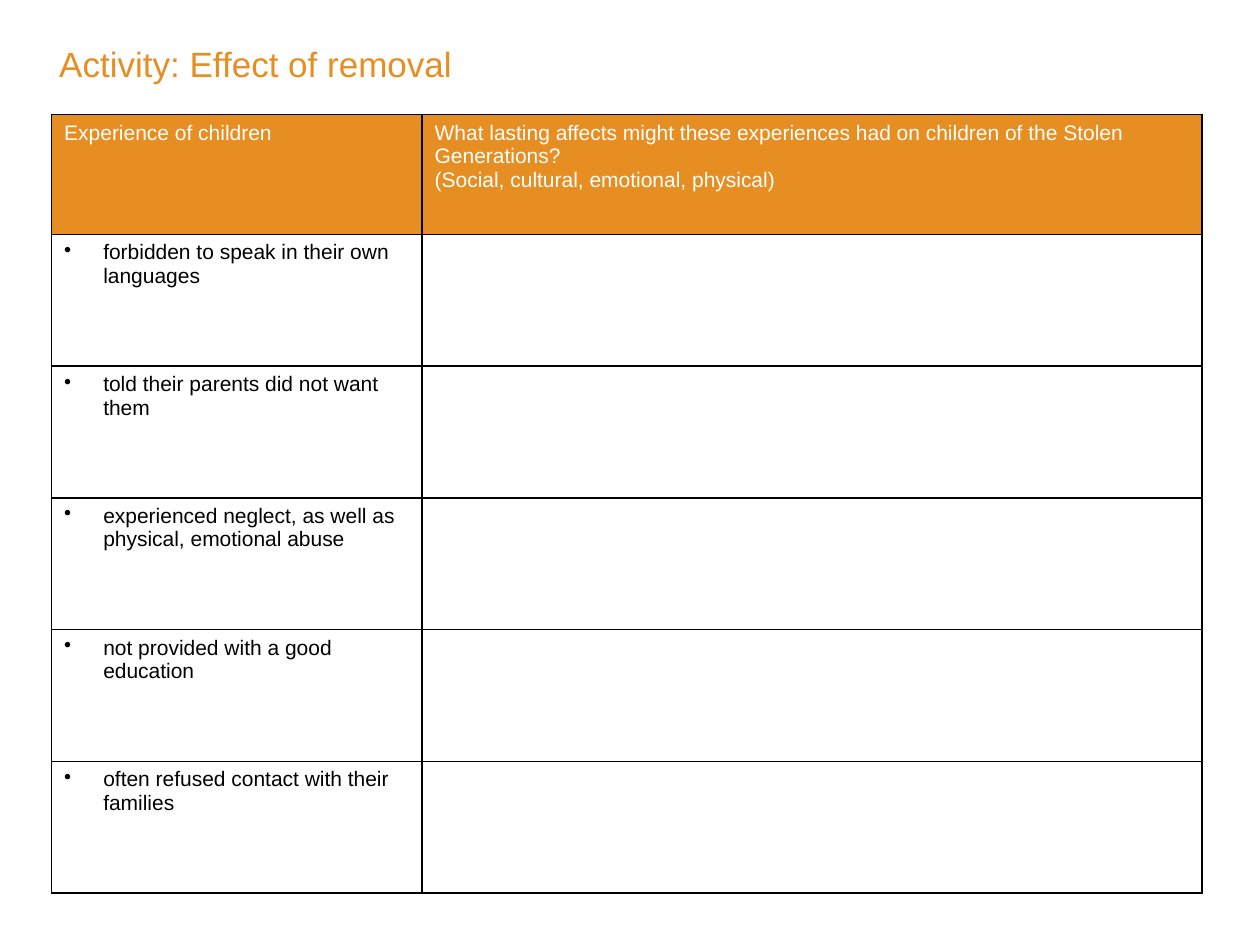
"""Builds the activity slide on the effect of removal."""
from dataclasses import dataclass

import pptx
import pptx.dml.color
import pptx.enum.text
import pptx.oxml
import pptx.oxml.ns
import pptx.util
from pptx.util import Inches


@dataclass(frozen=True)
class Theme:
    """Colours, font and type sizes of the slide."""
    font: str = "Arial"
    accent: str = "E78E23"
    white: str = "FFFFFF"
    black: str = "000000"
    title_size: int = 20
    body_size: int = 12
    border: int = 1


THEME = Theme()
HEADERS = [
    "Experience of children",
    "What lasting affects might these experiences had on children of the "
    "Stolen Generations?\n(Social, cultural, emotional, physical)",
]
EXPERIENCES = [
    "forbidden to speak in their own languages",
    "told their parents did not want them",
    "experienced neglect, as well as physical, emotional abuse",
    "not provided with a good education",
    "often refused contact with their families",
]


def format_text(tf, size, color):
    """Set font, size and colour on every run of a text frame."""
    for p in tf.paragraphs:
        for r in p.runs:
            r.font.name = THEME.font
            r.font.size = pptx.util.Pt(size)
            r.font.color.rgb = pptx.dml.color.RGBColor.from_string(color)


def add_borders(cell):
    """Draw a thin line on all four sides of a cell."""
    tc_pr = cell._tc.get_or_add_tcPr()
    width = pptx.util.Pt(THEME.border)
    for side in ("lnL", "lnR", "lnT", "lnB"):
        tc_pr.append(pptx.oxml.parse_xml(
            f'<a:{side} {pptx.oxml.ns.nsdecls("a")} w="{width}"><a:solidFill>'
            f'<a:srgbClr val="{THEME.black}"/></a:solidFill></a:{side}>'))


def add_bullet(p):
    """Give a paragraph a round bullet with a hanging indent."""
    p_pr = p._p.get_or_add_pPr()
    p_pr.set("marL", str(Inches(0.31)))
    p_pr.set("indent", str(-Inches(0.31)))
    p_pr.append(pptx.oxml.parse_xml(
        f'<a:buChar {pptx.oxml.ns.nsdecls("a")} char="•"/>'))


def add_title(s, left, top, width, height):
    """Place the centred slide title in its box."""
    tf = s.shapes.add_textbox(left, top, width, height).text_frame
    tf.word_wrap = True
    tf.text = "Activity: Effect of removal"
    tf.paragraphs[0].alignment = pptx.enum.text.PP_ALIGN.CENTER
    format_text(tf, THEME.title_size, THEME.accent)


def add_activity_table(s, left, top, width, height):
    """Place the table of experiences with blank answer cells."""
    rows = [HEADERS] + [[text, ""] for text in EXPERIENCES]
    table = s.shapes.add_table(len(rows), 2, left, top, width, height).table
    table.horz_banding = False
    table.columns[0].width = Inches(2.94)
    table.columns[1].width = width - Inches(2.94)
    header_height = Inches(0.95)
    for i, row in enumerate(rows):
        is_header = i == 0
        table.rows[i].height = (header_height if is_header else
                                (height - header_height) // len(EXPERIENCES))
        for j, text in enumerate(row):
            cell = table.cell(i, j)
            add_borders(cell)
            cell.text_frame.text = text
            if is_header:
                cell.fill.solid()
                cell.fill.fore_color.rgb = (
                    pptx.dml.color.RGBColor.from_string(THEME.accent))
            else:
                cell.fill.background()
                if text:
                    add_bullet(cell.text_frame.paragraphs[0])
            format_text(cell.text_frame, THEME.body_size,
                        THEME.white if is_header else THEME.black)


def main():
    """Build and save the presentation."""
    prs = pptx.Presentation()
    prs.slide_width, prs.slide_height = Inches(10), Inches(7.5)
    s = prs.slides.add_slide(prs.slide_layouts[6])
    add_activity_table(s, Inches(0.41), Inches(0.91), Inches(9.13), Inches(6.18))
    add_title(s, Inches(-2.32), Inches(0.29), Inches(8.7), Inches(1.25))
    prs.save("out.pptx")


if __name__ == "__main__":
    main()
